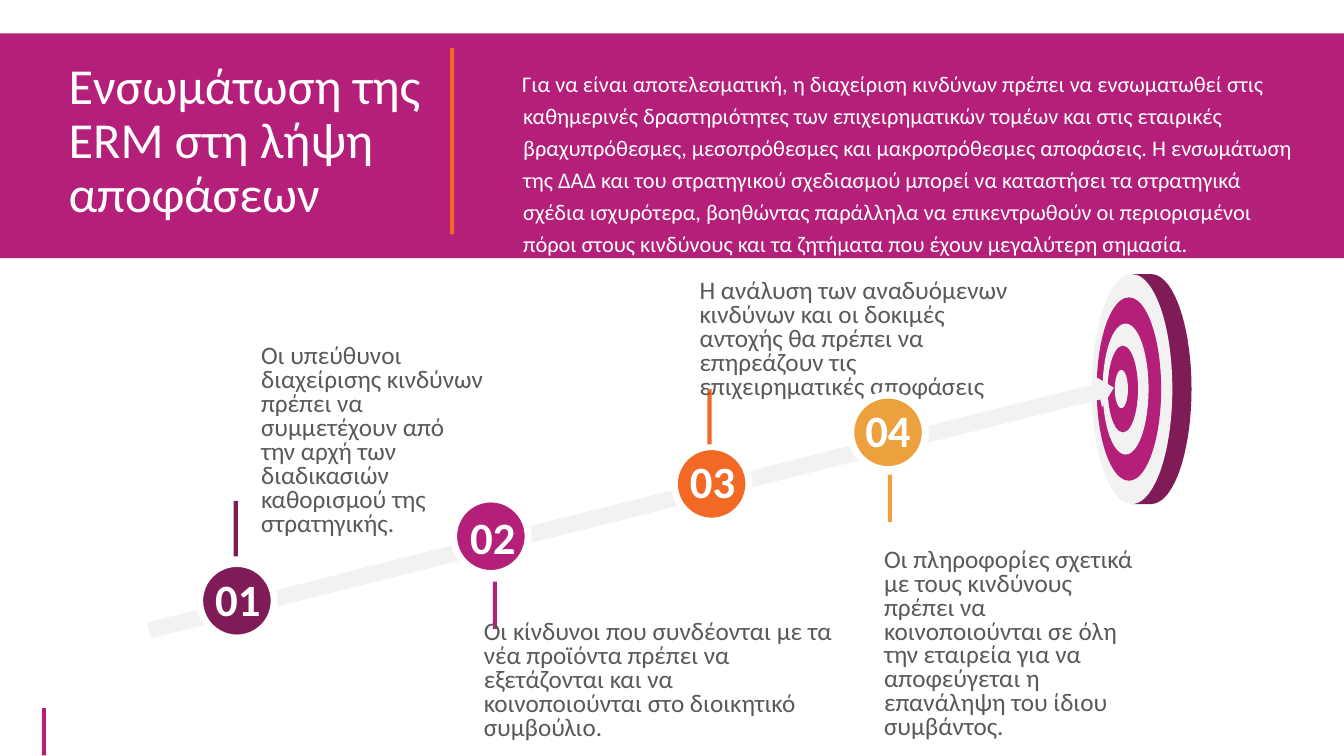
import dataclasses
import math

import lxml.etree
import pptx
import pptx.dml.color
import pptx.enum.shapes
import pptx.enum.text
import pptx.oxml.ns
import pptx.util

Pt = pptx.util.Pt
Kind = pptx.enum.shapes.MSO_SHAPE
Fit = pptx.enum.text.MSO_AUTO_SIZE
Side = pptx.enum.text.PP_ALIGN
Hold = pptx.enum.text.MSO_ANCHOR


@dataclasses.dataclass(frozen=True)
class Theme:
    plum: str = "7F1C58"
    pink: str = "B41F7A"
    orange: str = "F16924"
    amber: str = "EDA13E"
    pale: str = "F2F2F2"
    white: str = "FFFFFF"
    gray: str = "595959"
    font: str = "Calibri"
    title: int = 36
    intro: int = 16
    note: int = 18
    number: int = 32


theme = Theme()

TITLE = "Ενσωμάτωση της ΕRM στη λήψη αποφάσεων"
INTRO = (
    "Για να είναι αποτελεσματική, η διαχείριση κινδύνων πρέπει να ενσωματωθεί στις "
    "καθημερινές δραστηριότητες των επιχειρηματικών τομέων και στις εταιρικές "
    "βραχυπρόθεσμες, μεσοπρόθεσμες και μακροπρόθεσμες αποφάσεις. Η ενσωμάτωση της "
    "ΔΑΔ και του στρατηγικού σχεδιασμού μπορεί να καταστήσει τα στρατηγικά σχέδια "
    "ισχυρότερα, βοηθώντας παράλληλα να επικεντρωθούν οι περιορισμένοι πόροι στους "
    "κινδύνους και τα ζητήματα που έχουν μεγαλύτερη σημασία."
)
STEPS = [
    dict(hue=theme.plum, disc=(142.6, 402.5), label=(146.2, 404.6),
         stem=(167, 357.8, 2.9, 39.6), note=(183.6, 245.5, 164.9, 72),
         text="Οι υπεύθυνοι διαχείρισης κινδύνων πρέπει να συμμετέχουν από την "
              "αρχή των διαδικασιών καθορισμού της στρατηγικής."),
    dict(hue=theme.pink, disc=(324, 356.4), label=(328.3, 360),
         stem=(352.1, 415.4, 2.9, 33.8), note=(342.7, 442.8, 254.9, 54.7),
         text="Οι κίνδυνοι που συνδέονται με τα νέα προϊόντα πρέπει να "
              "εξετάζονται και να κοινοποιούνται στο διοικητικό συμβούλιο."),
    dict(hue=theme.orange, disc=(481.7, 319), label=(485.3, 320.4),
         stem=(505.4, 277.9, 2.9, 39.6), note=(496.8, 199.4, 237.6, 89.3),
         text="Η ανάλυση των αναδυόμενων κινδύνων και οι δοκιμές αντοχής θα "
              "πρέπει να επηρεάζουν τις επιχειρηματικές αποφάσεις"),
    dict(hue=theme.amber, disc=(607.7, 282.2), label=(610.6, 283.7),
         stem=(634.3, 339.1, 2.9, 33.8), note=(628.6, 391, 187.2, 72),
         text="Οι πληροφορίες σχετικά με τους κινδύνους πρέπει να κοινοποιούνται "
              "σε όλη την εταιρεία για να αποφεύγεται η επανάληψη του ίδιου "
              "συμβάντος."),
]
RINGS = [(808.6, 57.6, 164.2), (806.4, 46.1, 131), (804, 32.8, 93.6),
         (802.1, 21.6, 61.9), (810, 9.4, 27.4)]
RINGS[-1] = (801, 9.4, 27.4)
MID = 277.9
ARROWS = [(97.9, 369.4), (234.7, 334.8)]
BARS = [(29.9, 505.8, 2.9, 33.8, theme.pink),
        (0, 23.8, 960, 160.6, theme.pink),
        (321.5, 34.2, 2.9, 133.2, theme.orange)]


def rgb(hue):
    return pptx.dml.color.RGBColor.from_string(hue)


def paint(shape, hue):
    shape.shadow.inherit = False
    shape.fill.solid()
    shape.fill.fore_color.rgb = rgb(hue)
    shape.line.fill.background()
    return shape


def draw(slide, kind, box, hue):
    return paint(slide.shapes.add_shape(kind, *map(Pt, box)), hue)


def write(shape, text, size, hue, lead=None, side=Side.LEFT, bold=False):
    para = shape.text_frame.paragraphs[0]
    para.alignment = side
    para.space_before = Pt(0)
    if lead:
        para.line_spacing = lead
    run = para.add_run()
    run.text = text
    run.font.name = theme.font
    run.font.size = Pt(size)
    run.font.bold = bold
    run.font.color.rgb = rgb(hue)


def place(holder, box):
    holder.left, holder.top, holder.width, holder.height = map(Pt, box)
    frame = holder.text_frame
    frame.word_wrap = True
    frame.auto_size = Fit.NONE
    frame.vertical_anchor = Hold.TOP
    tree = holder.element.getparent()
    tree.append(holder.element)


def head(slide):
    for *box, hue in BARS:
        draw(slide, Kind.RECTANGLE, box, hue)
    title, intro = slide.shapes.title, slide.placeholders[1]
    place(intro, (365.8, 43.2, 572.4, 237.6))
    props = intro.text_frame.paragraphs[0]._p.get_or_add_pPr()
    props.set("marL", str(Pt(0.7)))
    props.set("indent", str(-Pt(0.7)))
    lxml.etree.SubElement(props, pptx.oxml.ns.qn("a:buNone"))
    write(intro, INTRO, theme.intro, theme.white, Pt(22.8))
    place(title, (41.8, 39.6, 273.6, 166.3))
    write(title, TITLE, theme.title, theme.white, 0.9)


def target(slide):
    face, wide, tall = RINGS[0]
    back, high = face + 13.7, tall / 2
    arc = [(Pt(back + wide / 2 * math.sin(math.radians(a))),
            Pt(MID - high * math.cos(math.radians(a)))) for a in range(0, 181, 5)]
    rim = slide.shapes.build_freeform(Pt(face), Pt(MID - high), 1.0)
    rim.add_line_segments(arc + [(Pt(face), Pt(MID + high))], close=True)
    paint(rim.convert_to_shape(), theme.plum)
    for i, (x, w, h) in enumerate(RINGS):
        hue = theme.pink if i % 2 else theme.pale
        draw(slide, Kind.OVAL, (x - w / 2, MID - h / 2, w, h), hue)


def step(slide, num, item):
    disc = draw(slide, Kind.OVAL, (*item["disc"], 53.3, 53.3), item["hue"])
    disc.line.color.rgb = rgb(theme.white)
    disc.line.width = Pt(5)
    draw(slide, Kind.RECTANGLE, item["stem"], item["hue"])

    note = slide.shapes.add_textbox(*map(Pt, item["note"]))
    frame = note.text_frame
    frame.word_wrap = True
    frame.auto_size = Fit.SHAPE_TO_FIT_TEXT
    frame.margin_left = frame.margin_right = Pt(2.9)
    frame.margin_top = frame.margin_bottom = Pt(1.4)
    write(note, item["text"], theme.note, theme.gray, Pt(17.1))

    label = slide.shapes.add_textbox(*map(Pt, (*item["label"], 47.5, 46.1)))
    label.text_frame.word_wrap = False
    label.text_frame.auto_size = Fit.SHAPE_TO_FIT_TEXT
    label.text_frame.vertical_anchor = Hold.MIDDLE
    write(label, f"{num:02}", theme.number, theme.white, None, Side.CENTER, True)


def main():
    deck = pptx.Presentation()
    deck.slide_width, deck.slide_height = Pt(960), Pt(540)
    slide = deck.slides.add_slide(deck.slide_layouts[1])
    head(slide)
    target(slide)
    for x, y in ARROWS:
        arrow = draw(slide, Kind.RIGHT_ARROW, (x, y, 569.5, 23), theme.pale)
        arrow.rotation = 345.9
    for num, item in enumerate(STEPS, 1):
        step(slide, num, item)
    deck.save("out.pptx")


if __name__ == "__main__":
    main()
